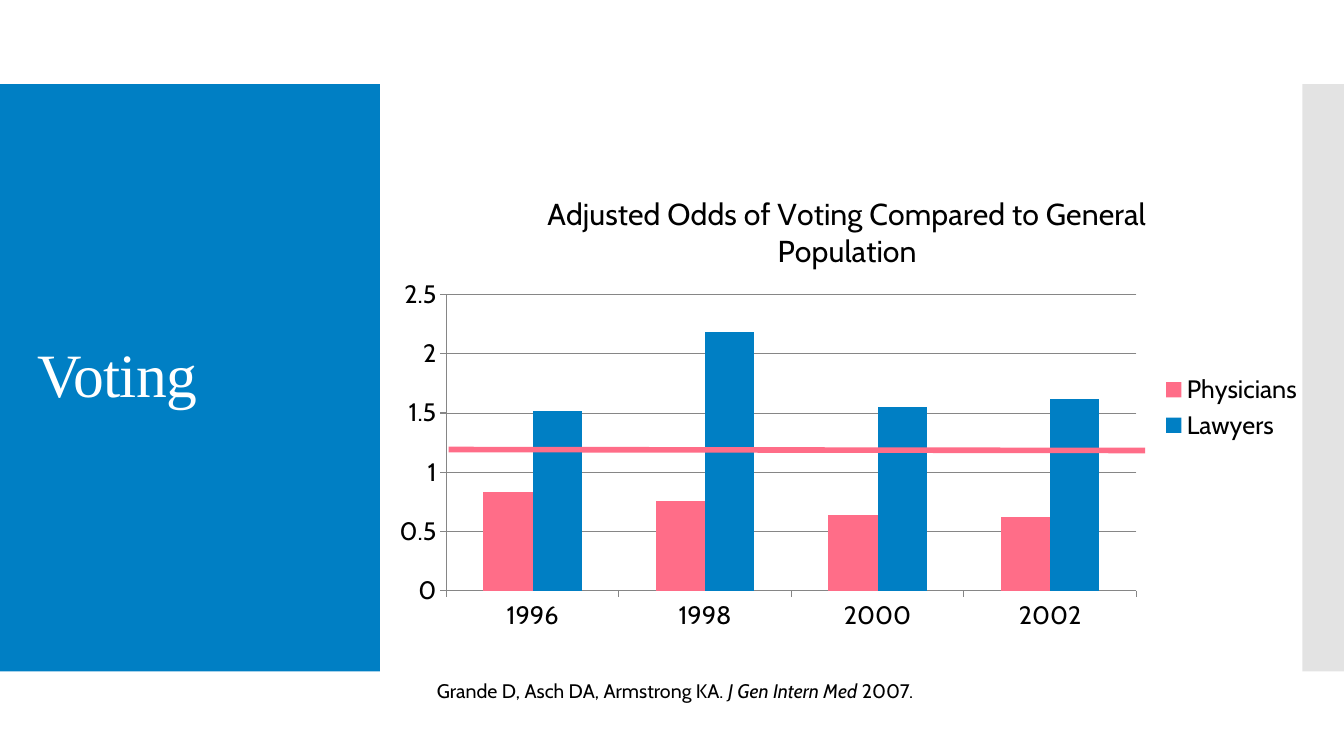
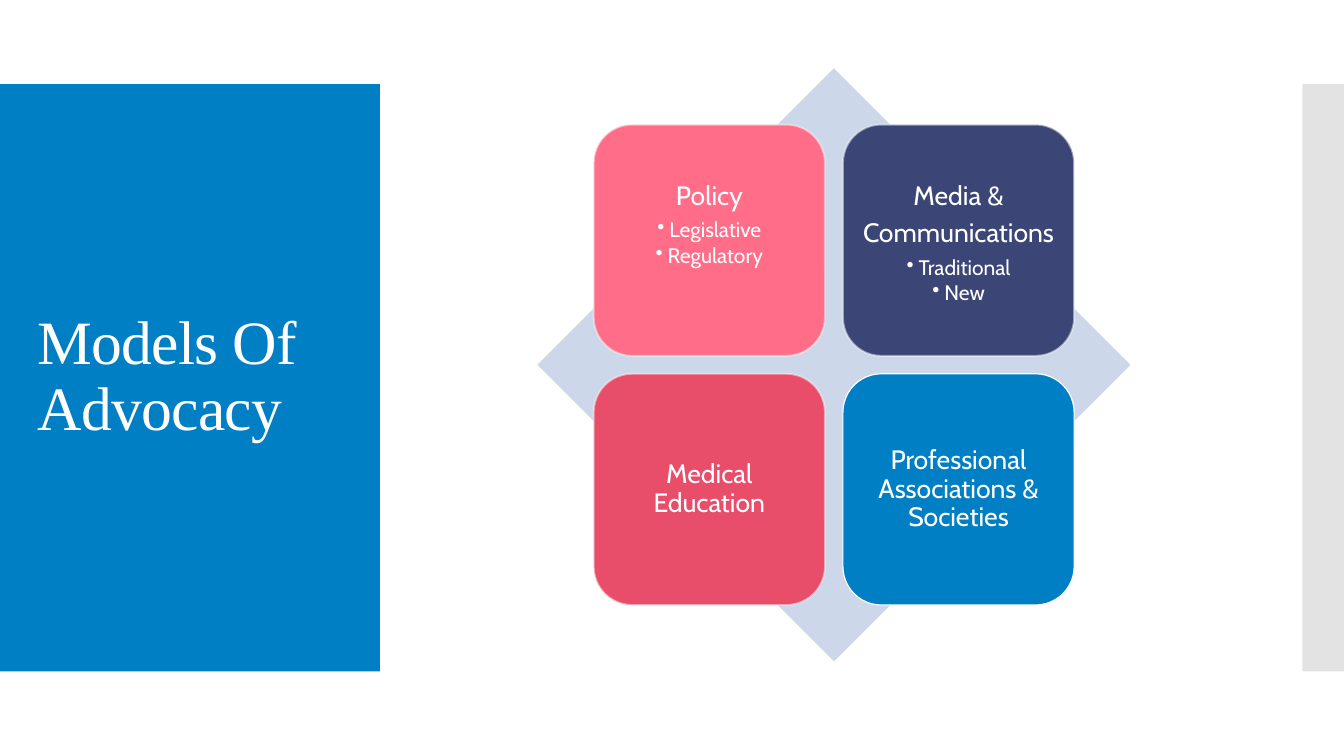
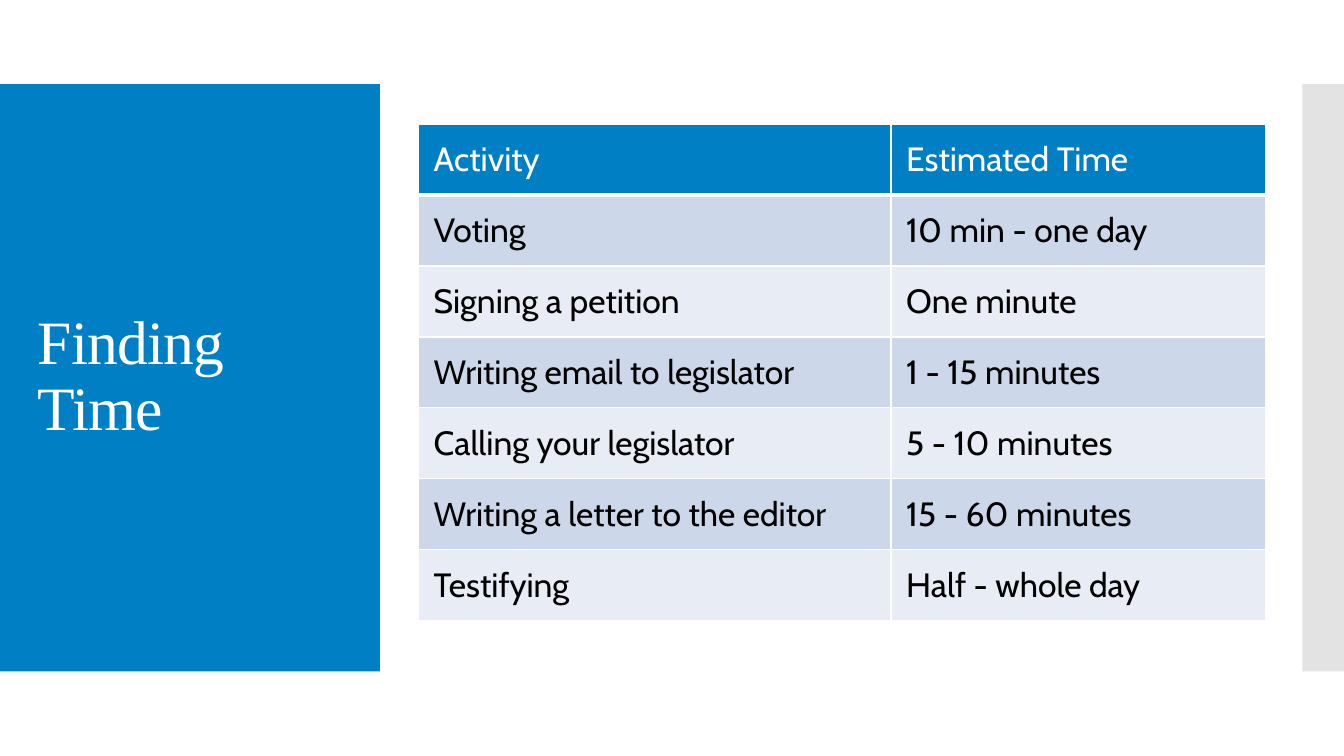
"""Builds three advocacy slides: voting odds, models of advocacy and finding time."""
import pptx
import pptx.chart.data
import pptx.dml.color
import pptx.enum.chart
import pptx.enum.shapes
import pptx.enum.text
import pptx.oxml
import pptx.oxml.ns
import pptx.util
import lxml.etree

Pt = pptx.util.Pt
RGBColor = pptx.dml.color.RGBColor
SHAPE = pptx.enum.shapes.MSO_SHAPE
ALIGN = pptx.enum.text.PP_ALIGN
ANCHOR = pptx.enum.text.MSO_ANCHOR
qn = pptx.oxml.ns.qn

BLUE = RGBColor(0x00, 0x7F, 0xC4)
PINK = RGBColor(0xFF, 0x6D, 0x88)
NAVY = RGBColor(0x3C, 0x46, 0x76)
ROSE = RGBColor(0xE8, 0x4D, 0x69)
PALE_BLUE = RGBColor(0xCC, 0xD8, 0xEA)
PALER_BLUE = RGBColor(0xE7, 0xEC, 0xF5)
EDGE_GREY = RGBColor(0xC8, 0xC8, 0xC8)
OUTLINE_GREY = RGBColor(0xF9, 0xF9, 0xF9)
AXIS_GREY = RGBColor(0x86, 0x86, 0x86)
WHITE = RGBColor(0xFF, 0xFF, 0xFF)
BLACK = RGBColor(0x00, 0x00, 0x00)

BODY_FONT = "Cabin"
TITLE_FONT = "Times New Roman"


def write(paragraph, text, *, size, color=BLACK, font=BODY_FONT, italic=False, tracking=None):
    run = paragraph.add_run()
    run.text = text
    run.font.size = Pt(size)
    run.font.name = font
    run.font.bold = False
    run.font.italic = italic
    run.font.color.rgb = color
    if tracking is not None:
        run.font._element.set("spc", str(round(tracking * 100)))


def set_opacity(properties, percent):
    color = next(properties.iter(qn("a:srgbClr")))
    lxml.etree.SubElement(color, qn("a:alpha"), val=str(percent * 1000))


def set_insets(frame, left, top, right, bottom):
    frame.margin_left, frame.margin_top = Pt(left), Pt(top)
    frame.margin_right, frame.margin_bottom = Pt(right), Pt(bottom)


class Deck:
    def __init__(self):
        self.presentation = pptx.Presentation()
        self.presentation.slide_width = Pt(960)
        self.presentation.slide_height = Pt(540)
        self.slide = None

    def start(self, title):
        self.slide = self.presentation.slides.add_slide(self.presentation.slide_layouts[6])
        self.shape(SHAPE.RECTANGLE, 0, 60, 271.3, 419.5, BLUE)
        self.shape(SHAPE.RECTANGLE, 930.3, 60, 29.7, 419.5, EDGE_GREY, opacity=50)
        frame = self.text_frame(20, 88.5, 232, 362)
        frame.vertical_anchor = ANCHOR.MIDDLE
        heading = frame.paragraphs[0]
        heading.line_spacing = 0.9
        write(heading, title, size=44, color=WHITE, font=TITLE_FONT, tracking=-0.6)

    def shape(self, kind, left, top, width, height, fill, opacity=100):
        shape = self.slide.shapes.add_shape(kind, Pt(left), Pt(top), Pt(width), Pt(height))
        shape.shadow.inherit = False
        shape.fill.solid()
        shape.fill.fore_color.rgb = fill
        if opacity < 100:
            set_opacity(shape._element.spPr.find(qn("a:solidFill")), opacity)
        shape.line.fill.background()
        return shape

    def text_frame(self, left, top, width, height):
        box = self.slide.shapes.add_textbox(Pt(left), Pt(top), Pt(width), Pt(height))
        box.text_frame.word_wrap = True
        return box.text_frame

    def line(self, start, end, color, width):
        rule = self.slide.shapes.add_connector(
            pptx.enum.shapes.MSO_CONNECTOR.STRAIGHT, *map(Pt, start + end))
        rule.line.color.rgb = color
        rule.line.width = Pt(width)
        lxml.etree.SubElement(rule._element.spPr, qn("a:effectLst"))

    def column_chart(self, left, top, width, height, title, categories, series, plot_area):
        data = pptx.chart.data.CategoryChartData()
        data.categories = categories
        for name, values, _ in series:
            data.add_series(name, values)
        chart = self.slide.shapes.add_chart(
            pptx.enum.chart.XL_CHART_TYPE.COLUMN_CLUSTERED,
            Pt(left), Pt(top), Pt(width), Pt(height), data).chart
        chart.font.size = Pt(18)
        chart.font.name = BODY_FONT
        chart.font.color.rgb = BLACK
        chart.has_title = True
        chart.chart_title.include_in_layout = False
        write(chart.chart_title.text_frame.paragraphs[0], title, size=21.6)
        chart.has_legend = True
        chart.legend.position = pptx.enum.chart.XL_LEGEND_POSITION.RIGHT
        chart.legend.include_in_layout = False
        for axis in (chart.category_axis, chart.value_axis):
            axis.format.line.color.rgb = AXIS_GREY
            axis.major_tick_mark = pptx.enum.chart.XL_TICK_MARK.OUTSIDE
        chart.value_axis.minimum_scale = 0
        chart.value_axis.maximum_scale = 2.5
        chart.value_axis.major_unit = 0.5
        chart.value_axis.major_gridlines.format.line.color.rgb = AXIS_GREY
        plot = chart.plots[0]
        plot.gap_width = 150
        plot.overlap = 0
        plot.vary_by_categories = False
        for columns, (_, _, color) in zip(plot.series, series):
            columns.format.fill.solid()
            columns.format.fill.fore_color.rgb = color
        self.place_plot(chart, plot_area)

    def place_plot(self, chart, plot_area):
        area = next(chart._chartSpace.iter(qn("c:plotArea")))
        for previous in area.findall(qn("c:layout")):
            area.remove(previous)
        layout = pptx.oxml.parse_xml(
            f'<c:layout {pptx.oxml.ns.nsdecls("c")}><c:manualLayout/></c:layout>')
        settings = [("layoutTarget", "inner"), ("xMode", "edge"), ("yMode", "edge")]
        settings += zip("xywh", plot_area)
        for tag, value in settings:
            lxml.etree.SubElement(layout[0], qn(f"c:{tag}"), val=str(value))
        area.insert(0, layout)

    def card(self, left, top, side, fill, outline, headings, bullets):
        color, width, opacity = outline
        card = self.shape(SHAPE.ROUNDED_RECTANGLE, left, top, side, side, fill)
        card.line.color.rgb = color
        card.line.width = Pt(width)
        if opacity < 100:
            set_opacity(card.line._ln, opacity)
        frame = card.text_frame
        frame.word_wrap = True
        set_insets(frame, 5.5, 33 if bullets else 5.5, 5.5, 5.5)
        frame.vertical_anchor = ANCHOR.TOP if bullets else ANCHOR.MIDDLE
        entries = [(text, 19, 6.2) for text in headings] + [(text, 15, 2.1) for text in bullets]
        for index, (text, size, gap) in enumerate(entries):
            paragraph = frame.add_paragraph() if index else frame.paragraphs[0]
            if index >= len(headings):
                properties = paragraph._p.get_or_add_pPr()
                properties.set("marL", str(Pt(8.6)))
                properties.set("indent", str(-Pt(8.6)))
                lxml.etree.SubElement(properties, qn("a:buChar"), char="•")
            paragraph.alignment = ALIGN.CENTER
            paragraph.line_spacing = 0.9
            paragraph.space_after = Pt(gap)
            write(paragraph, text, size=size, color=WHITE)

    def table(self, left, top, widths, row_height, rows):
        table = self.slide.shapes.add_table(
            len(rows), len(widths), Pt(left), Pt(top),
            Pt(sum(widths)), Pt(row_height * len(rows))).table
        table.first_row = False
        table.horz_banding = False
        for column, width in zip(table.columns, widths):
            column.width = Pt(width)
        for row_index, texts in enumerate(rows):
            table.rows[row_index].height = Pt(row_height)
            header = row_index == 0
            band = PALE_BLUE if row_index % 2 else PALER_BLUE
            for column_index, text in enumerate(texts):
                cell = table.cell(row_index, column_index)
                self.borders(cell, L=1, R=1, T=1, B=3 if header else 1)
                cell.fill.solid()
                cell.fill.fore_color.rgb = BLUE if header else band
                cell.vertical_anchor = ANCHOR.MIDDLE
                set_insets(cell, 10.8, 10.8, 10.8, 10.8)
                write(cell.text_frame.paragraphs[0], text, size=24,
                      color=WHITE if header else BLACK)

    def borders(self, cell, **widths):
        properties = cell._tc.get_or_add_tcPr()
        for side, width in widths.items():
            edge = lxml.etree.SubElement(properties, qn(f"a:ln{side}"), w=str(Pt(width)))
            fill = lxml.etree.SubElement(edge, qn("a:solidFill"))
            lxml.etree.SubElement(fill, qn("a:srgbClr"), val=str(WHITE))


def voting(deck):
    deck.start("Voting")
    deck.column_chart(
        272.2, 123, 666, 336.2, "Adjusted Odds of Voting Compared to General Population",
        ["1996", "1998", "2000", "2002"],
        [("Physicians", (0.83, 0.76, 0.64, 0.62), PINK),
         ("Lawyers", (1.52, 2.18, 1.55, 1.62), BLUE)],
        plot_area=(0.07, 0.26, 0.74, 0.63))
    deck.line((320.4, 321.1), (818, 321.8), PINK, 4)
    citation = deck.text_frame(305, 481.7, 534, 24.5).paragraphs[0]
    write(citation, "Grande D, Asch DA, Armstrong KA. ", size=14)
    write(citation, "J Gen Intern Med ", size=14, italic=True)
    write(citation, "2007.", size=14)


def models_of_advocacy(deck):
    deck.start("Models Of Advocacy")
    center_x, center_y, diamond, side, gap = 595.7, 260.6, 423.6, 165.2, 12.8
    deck.shape(SHAPE.DIAMOND, center_x - diamond / 2, center_y - diamond / 2,
               diamond, diamond, PALE_BLUE)
    soft, crisp = (OUTLINE_GREY, 1.35, 50), (WHITE, 0.85, 100)
    models = [
        (PINK, soft, ["Policy"], ["Legislative", "Regulatory"]),
        (NAVY, soft, ["Media &", "Communications"], ["Traditional", "New"]),
        (ROSE, soft, ["Medical Education"], []),
        (BLUE, crisp, ["Professional Associations & Societies"], []),
    ]
    for index, model in enumerate(models):
        row, column = divmod(index, 2)
        left = center_x - side - gap / 2 + column * (side + gap)
        top = center_y - side - gap / 2 + row * (side + gap)
        deck.card(left, top, side, *model)


def finding_time(deck):
    deck.start("Finding Time")
    deck.table(299, 88.6, (337.5, 267.8), 50.7, [
        ("Activity", "Estimated Time"),
        ("Voting", "10 min - one day"),
        ("Signing a petition", "One minute"),
        ("Writing email to legislator", "1 - 15 minutes"),
        ("Calling your legislator", "5 - 10 minutes"),
        ("Writing a letter to the editor", "15 - 60 minutes"),
        ("Testifying", "Half - whole day"),
    ])


def main():
    deck = Deck()
    voting(deck)
    models_of_advocacy(deck)
    finding_time(deck)
    deck.presentation.save("out.pptx")


if __name__ == "__main__":
    main()
